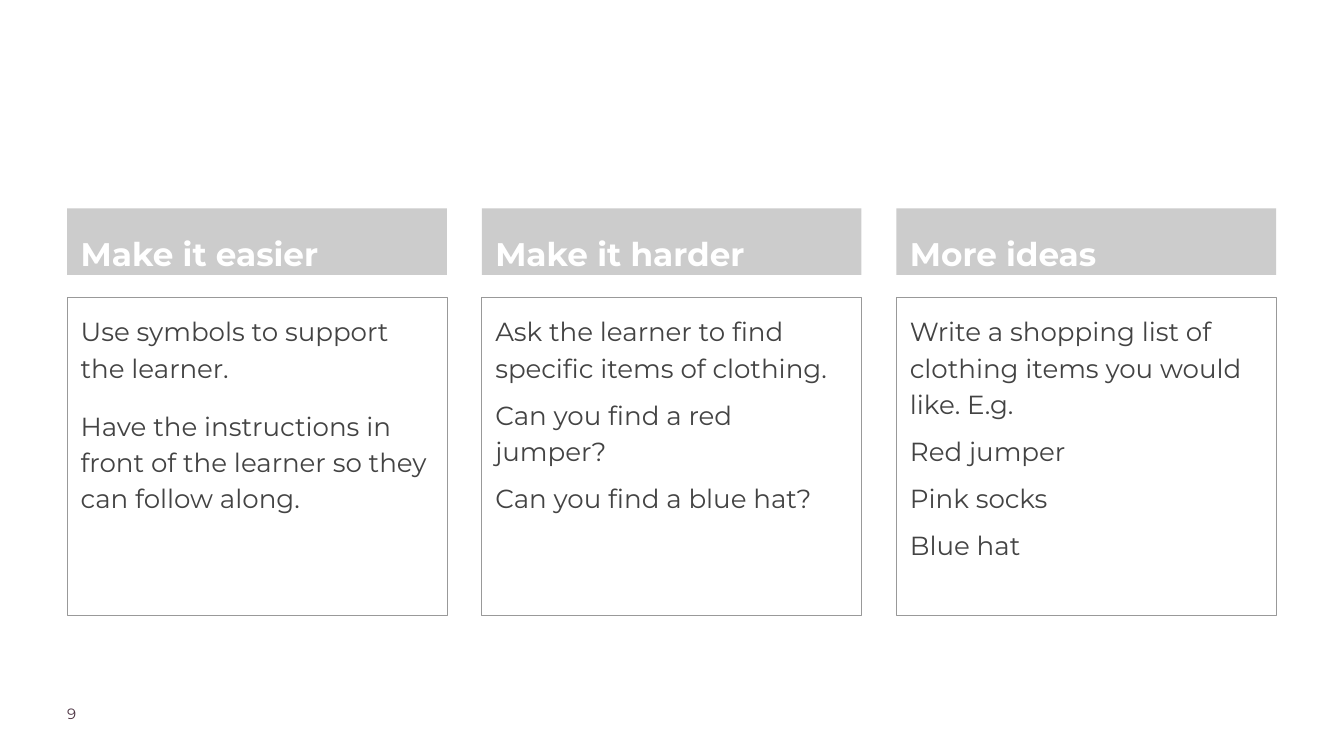
from dataclasses import dataclass

from pptx import Presentation
from pptx.dml.color import RGBColor
from pptx.enum import shapes, text
from pptx.util import Inches, Pt

COLOURS = {"band": "CCCCCC", "border": "999999", "heading": "FFFFFF",
           "body": "434343", "number": "4B3241"}
FONT = "Montserrat"
LEFT, PITCH, WIDTH = 1, 6.17, 5.65
INSET = 0.2


@dataclass
class Column:
    heading: str
    lines: list[str]
    gap: int = 12


COLUMNS = [
    Column("Make it easier", [
        "Use symbols to support the learner.",
        "Have the instructions in front of the learner so they can follow along.",
    ], gap=24),
    Column("Make it harder", [
        "Ask the learner to find specific items of clothing.",
        "Can you find a red jumper?",
        "Can you find a blue hat?",
    ]),
    Column("More ideas", [
        "Write a shopping list of clothing items you would like. E.g.",
        "Red jumper",
        "Pink socks",
        "Blue hat",
    ]),
]


def colour(name: str) -> RGBColor:
    return RGBColor.from_string(COLOURS[name])


def set_all(target, values: dict) -> None:
    for name, value in values.items():
        setattr(target, name, value)


def write(shape, lines: list[str], tint: str, size: int, inset: float = INSET,
          spacing: float = 1.0, gap: int = 0, bold: bool = False) -> None:
    frame = shape.text_frame
    margins = {f"margin_{side}": Inches(inset) for side in ("left", "top", "right", "bottom")}
    set_all(frame, {"word_wrap": True, "vertical_anchor": text.MSO_ANCHOR.TOP, **margins})
    for index, line in enumerate(lines):
        para = frame.add_paragraph() if index else frame.paragraphs[0]
        set_all(para, {"alignment": text.PP_ALIGN.LEFT, "line_spacing": spacing,
                       "space_before": Pt(gap if index else 0)})
        span = para.add_run()
        span.text = line
        set_all(span.font, {"name": FONT, "size": Pt(size), "bold": bold})
        span.font.color.rgb = colour(tint)


def add_box(page, left: float, top: float, height: float):
    box = page.shapes.add_shape(shapes.MSO_SHAPE.RECTANGLE, Inches(left), Inches(top),
                                Inches(WIDTH), Inches(height))
    box.shadow.inherit = False
    return box


def draw_column(page, column: Column, left: float) -> None:
    band = add_box(page, left, 3.1, 0.99)
    band.fill.solid()
    band.fill.fore_color.rgb = colour("band")
    band.line.fill.background()
    write(band, [column.heading], "heading", 35, spacing=1.3, bold=True)

    panel = add_box(page, left, 4.43, 4.72)
    panel.fill.background()
    panel.line.color.rgb = colour("border")
    panel.line.width = Pt(0.75)
    write(panel, column.lines, "body", 28, spacing=1.15, gap=column.gap)


def main() -> None:
    deck = Presentation()
    set_all(deck, {"slide_width": Inches(20), "slide_height": Inches(11.25)})
    page = deck.slides.add_slide(deck.slide_layouts[6])
    for index, column in enumerate(COLUMNS):
        draw_column(page, column, LEFT + index * PITCH)
    number = page.shapes.add_textbox(Inches(LEFT), Inches(10.48), Inches(1.57), Inches(0.39))
    write(number, ["9"], "number", 16, inset=0)
    deck.save("out.pptx")


if __name__ == "__main__":
    main()
